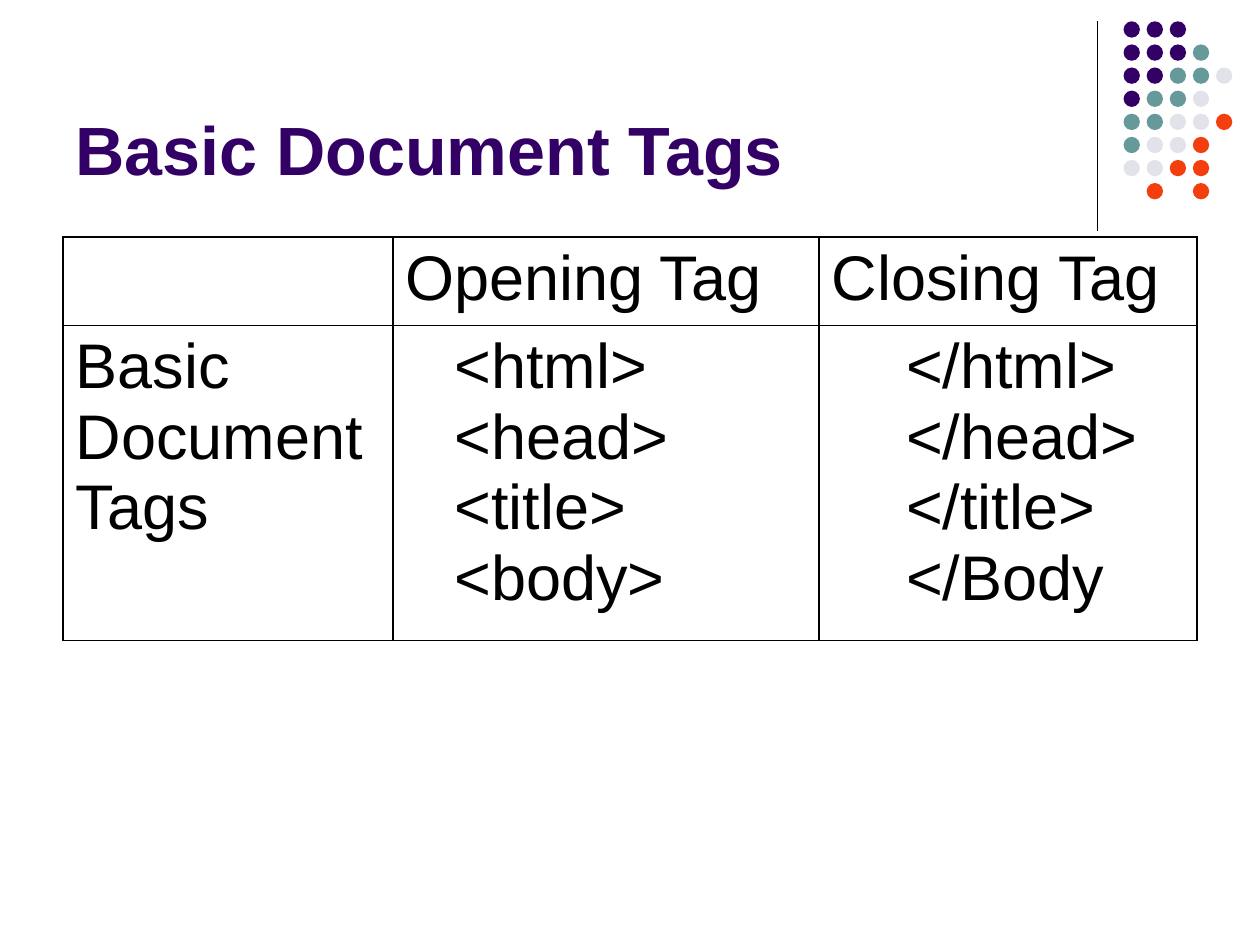
from dataclasses import dataclass
from typing import Any

import lxml.etree
import pptx
import pptx.dml.color
import pptx.enum.shapes
import pptx.enum.text
import pptx.oxml.ns
import pptx.util

Cm = pptx.util.Cm
Pt = pptx.util.Pt
qn = pptx.oxml.ns.qn

BLACK = "000000"
PURPLE = "330066"
TINTS = {"P": PURPLE, "T": "669999", "G": "E2E3EA", "R": "F33E0D"}
DOTS = ["PPP", "PPPT", "PPTTG", "PTTG", "TTGGR", "TGGR", "GGRR", " R R"]
TITLE = {"name": "Arial", "size": Pt(39), "bold": True}
BODY = {"name": "Arial", "size": Pt(36), "bold": False}


@dataclass
class Dot:
    col: int
    row: int
    tint: str


@dataclass
class Entry:
    row: int
    col: int
    lines: list[str]
    indent: float = 0


ENTRIES = [
    Entry(0, 0, []),
    Entry(0, 1, ["Opening Tag"]),
    Entry(0, 2, ["Closing Tag"]),
    Entry(1, 0, ["Basic Document Tags"]),
    Entry(1, 1, ["<html>", "<head>", "<title>", "<body>"], 0.99),
    Entry(1, 2, ["</html>", "</head>", "</title>", "</Body"], 1.5),
]


def paint(target: Any, tint: str) -> None:
    if hasattr(target, "solid"):
        target.solid()
        target = target.fore_color
    else:
        target = getattr(target, "color", target)
    target.rgb = pptx.dml.color.RGBColor.from_string(tint)


def style(font: Any, form: dict[str, Any], tint: str) -> None:
    for key, value in form.items():
        setattr(font, key, value)
    paint(font, tint)


def draw_rule(slide: Any) -> None:
    rule = slide.shapes.add_connector(
        pptx.enum.shapes.MSO_CONNECTOR.STRAIGHT,
        Cm(22.12), Cm(0.43), Cm(22.12), Cm(4.65))
    rule.line.width = Pt(0.75)
    paint(rule.line, BLACK)
    props = rule.line._get_or_add_ln().getparent()
    lxml.etree.SubElement(props, qn("a:effectLst"))


def draw_dot(group: Any, dot: Dot) -> None:
    step = Cm(3.26) / 7
    shape = group.shapes.add_shape(
        pptx.enum.shapes.MSO_SHAPE.OVAL,
        Cm(22.65) + round(dot.col * step), Cm(0.43) + round(dot.row * step),
        Cm(0.33), Cm(0.33))
    shape.shadow.inherit = False
    shape.line.fill.background()
    paint(shape.fill, dot.tint)


def draw_title(slide: Any, text: str) -> None:
    box = slide.shapes.add_textbox(Cm(1.27), Cm(0.33), Cm(20.95), Cm(3.6))
    frame = box.text_frame
    frame.word_wrap = True
    frame.vertical_anchor = pptx.enum.text.MSO_ANCHOR.BOTTOM
    frame.text = text
    style(frame.paragraphs[0].runs[0].font, TITLE, PURPLE)


def edge(cell: Any) -> None:
    props = cell._tc.get_or_add_tcPr()
    for side in ("lnL", "lnR", "lnT", "lnB"):
        line = lxml.etree.SubElement(props, qn(f"a:{side}"), w=str(Pt(1)))
        fill = lxml.etree.SubElement(line, qn("a:solidFill"))
        lxml.etree.SubElement(fill, qn("a:srgbClr"), val=BLACK)


def fill_cell(cell: Any, entry: Entry) -> None:
    edge(cell)
    cell.fill.background()
    cell.text = "\n".join(entry.lines)
    for para in cell.text_frame.paragraphs:
        if entry.indent:
            para._p.get_or_add_pPr().set("marL", str(Cm(entry.indent)))
        for run in para.runs:
            style(run.font, BODY, BLACK)


def draw_table(slide: Any, entries: list[Entry]) -> None:
    table = slide.shapes.add_table(
        2, 3, Cm(1.27), Cm(4.78), Cm(22.86), Cm(7.62)).table
    table.first_row = False
    table.horz_banding = False
    for col, width in zip(table.columns, (6.65, 8.59, 7.62)):
        col.width = Cm(width)
    for row, height in zip(table.rows, (1.68, 5.94)):
        row.height = Cm(height)
    for entry in entries:
        fill_cell(table.cell(entry.row, entry.col), entry)


def main() -> None:
    deck = pptx.Presentation()
    deck.slide_width, deck.slide_height = Cm(25.4), Cm(19.05)
    slide = deck.slides.add_slide(deck.slide_layouts[6])
    draw_rule(slide)
    group = slide.shapes.add_group_shape()
    for row, marks in enumerate(DOTS):
        for col, mark in enumerate(marks):
            if mark in TINTS:
                draw_dot(group, Dot(col, row, TINTS[mark]))
    draw_title(slide, "Basic Document Tags")
    draw_table(slide, ENTRIES)
    deck.save("out.pptx")


if __name__ == "__main__":
    main()
